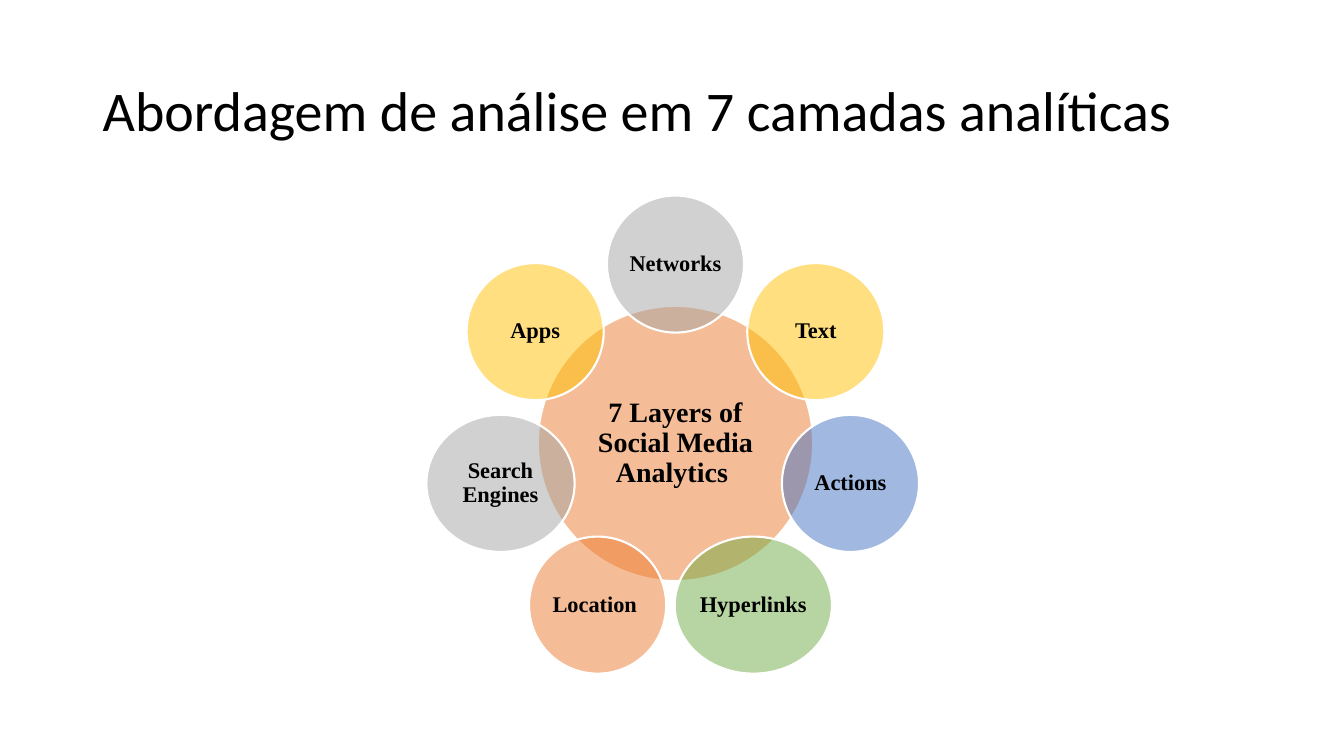
from math import cos, pi, sin

from lxml.etree import SubElement
from pptx import Presentation
from pptx.dml.color import RGBColor
from pptx.enum.shapes import MSO_SHAPE
from pptx.enum.text import MSO_ANCHOR, PP_ALIGN
from pptx.oxml.ns import qn
from pptx.util import Inches, Pt

COLORS = {
    "black": "000000",
    "white": "FFFFFF",
    "orange": "ED7D31",
    "gray": "A5A5A5",
    "gold": "FFC000",
    "blue": "4472C4",
    "green": "70AD47",
}

# Outer circles, clockwise from the top: text, colour, width
LAYERS = [
    ("Networks", "gray", 1.36),
    ("Text", "gold", 1.36),
    ("Actions", "blue", 1.36),
    ("Hyperlinks", "green", 1.56),
    ("Location ", "orange", 1.36),
    ("Search Engines", "gray", 1.47),
    ("Apps", "gold", 1.36),
]
MID_X, MID_Y = 6.7, 4.4
RADIUS = 1.78
HEIGHT = 1.36


class Painter:
    """Holds the style and the current slide."""

    def __init__(self, slide):
        self.slide = slide
        self.head = "Calibri"
        self.body = "Times New Roman"

    def color(self, name):
        return RGBColor.from_string(COLORS[name])

    def label(self, shape, text, font, size, bold=False):
        frame = shape.text_frame
        frame.word_wrap = True
        frame.vertical_anchor = MSO_ANCHOR.MIDDLE
        para = frame.paragraphs[0]
        para.text = text
        para.line_spacing = 0.9
        para.font.name = font
        para.font.size = Pt(size)
        para.font.bold = bold
        para.font.color.rgb = self.color("black")
        return frame, para

    def title(self, text, left, top, width, height):
        box = self.slide.shapes.add_textbox(
            Inches(left), Inches(top), Inches(width), Inches(height))
        self.label(box, text, self.head, 40)

    def circle(self, text, fill, x, y, width, height, size, inset):
        """Draw a half-transparent ellipse centred on x, y."""
        shape = self.slide.shapes.add_shape(
            MSO_SHAPE.OVAL, Inches(x - width / 2), Inches(y - height / 2),
            Inches(width), Inches(height))
        shape.shadow.inherit = False
        shape.fill.solid()
        shape.fill.fore_color.rgb = self.color(fill)
        tint = shape.element.spPr.find(qn("a:solidFill"))[0]
        SubElement(tint, qn("a:alpha")).set("val", "50000")
        shape.line.color.rgb = self.color("white")
        shape.line.width = Pt(1.5)

        frame, para = self.label(shape, text, self.body, size, True)
        para.alignment = PP_ALIGN.CENTER
        frame.margin_left = frame.margin_right = Inches(inset)
        frame.margin_top = frame.margin_bottom = Inches(inset)


def main():
    deck = Presentation()
    deck.slide_width, deck.slide_height = Inches(13.33), Inches(7.5)
    page = Painter(deck.slides.add_slide(deck.slide_layouts[6]))

    # Title
    page.title("Abordagem de análise em 7 camadas analíticas",
               0.92, 0.4, 11.5, 1.45)

    # Centre circle
    page.circle("7 Layers of Social Media Analytics ", "orange",
                MID_X, MID_Y, 2.73, 2.73, 20, 0.03)

    # Ring of layers
    for i, (text, fill, width) in enumerate(LAYERS):
        angle = 2 * pi * i / len(LAYERS)
        x = MID_X + RADIUS * sin(angle)
        y = MID_Y - RADIUS * cos(angle)
        page.circle(text, fill, x, y, width, HEIGHT, 16, 0.02)

    deck.save("out.pptx")


if __name__ == "__main__":
    main()
